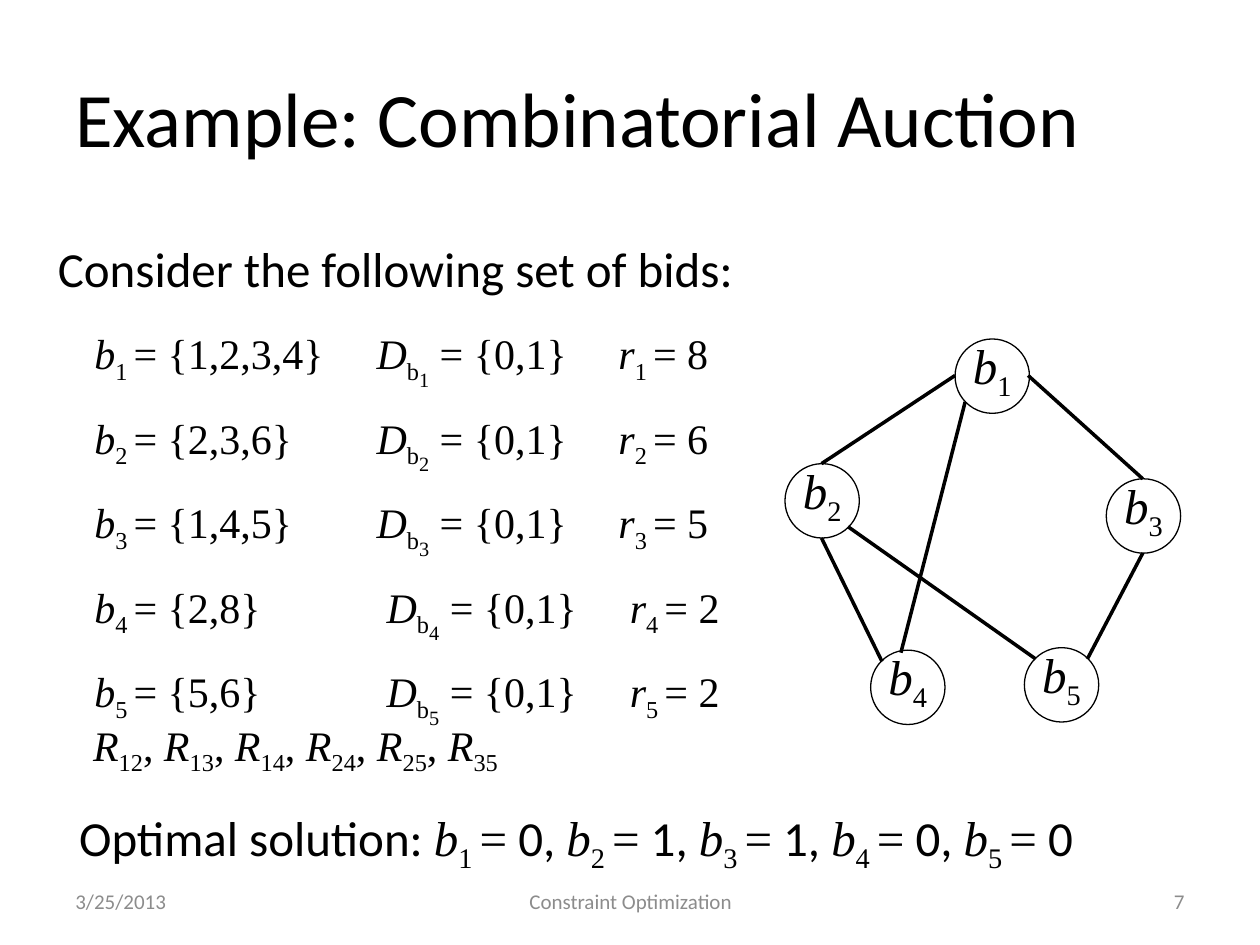
from lxml import etree
from pptx import Presentation
from pptx.dml.color import RGBColor
from pptx.enum.shapes import MSO_CONNECTOR, MSO_SHAPE
from pptx.enum.text import MSO_ANCHOR, PP_ALIGN
from pptx.oxml.ns import qn
from pptx.util import Emu, Pt

LEFT, CENTER, RIGHT = PP_ALIGN.LEFT, PP_ALIGN.CENTER, PP_ALIGN.RIGHT
TOP, MIDDLE, BOTTOM = MSO_ANCHOR.TOP, MSO_ANCHOR.MIDDLE, MSO_ANCHOR.BOTTOM
OVAL = MSO_SHAPE.OVAL
STRAIGHT = MSO_CONNECTOR.STRAIGHT

BLACK = RGBColor(0x00, 0x00, 0x00)
GRAY = RGBColor(0x8C, 0x8C, 0x8C)
SANS = "Calibri"
SERIF = "Times New Roman"
PX_PER_INCH = 100
NODE_SIZE = 59

BIDS = [
    ("{1,2,3,4}", 8, (224, 416)),
    ("{2,3,6}", 6, (224, 416)),
    ("{1,4,5}", 5, (224, 416)),
    ("{2,8}", 2, (232, 425)),
    ("{5,6}", 2, (232, 425)),
]
CONSTRAINTS = ["12", "13", "14", "24", "25", "35"]
SOLUTION = [0, 1, 1, 0, 0]
NODES = [(135, 0), (0, 99), (255, 111), (68, 247), (190, 245)]
EDGES = [
    (135, 29, 29, 99),
    (193, 29, 284, 111),
    (143, 50, 92, 249),
    (29, 158, 77, 256),
    (50, 149, 199, 254),
    (284, 170, 240, 254),
]


def px(length):
    return Emu(length * 914400 // PX_PER_INCH)


def add_run(paragraph, text, size, font=SERIF, color=BLACK, italic=False, baseline=0):
    run = paragraph.add_run()
    run.text = text
    run.font.name = font
    run.font.size = Pt(size)
    run.font.color.rgb = color
    run.font.italic = italic
    if baseline:
        run._r.get_or_add_rPr().set("baseline", str(baseline * 1000))


def add_variable(paragraph, letter, index, size):
    add_run(paragraph, letter, size, italic=True)
    add_run(paragraph, index, size, baseline=-25)


def set_tabs(paragraph, positions):
    tabs = etree.SubElement(paragraph._p.get_or_add_pPr(), qn("a:tabLst"))
    for position in positions:
        etree.SubElement(tabs, qn("a:tab"), pos=str(px(position)), algn="l")


def clear_margins(frame):
    frame.margin_left = frame.margin_right = 0
    frame.margin_top = frame.margin_bottom = 0


def add_text_frame(slide, box, anchor=TOP):
    frame = slide.shapes.add_textbox(*map(px, box)).text_frame
    frame.word_wrap = True
    frame.vertical_anchor = anchor
    return frame


def add_label(slide, box, text, size, color=BLACK, align=LEFT, anchor=MIDDLE):
    frame = add_text_frame(slide, box, anchor)
    paragraph = frame.paragraphs[0]
    paragraph.alignment = align
    add_run(paragraph, text, size, SANS, color)
    return frame


def add_footer(slide, box):
    left, top, width, height = box
    add_label(slide, (left, top, 233, height), "3/25/2013", 12, GRAY)
    add_label(slide, (left + 292, top, 317, height), "Constraint Optimization", 12, GRAY, CENTER)
    add_label(slide, (left + width - 233, top, 233, height), "7", 12, GRAY, RIGHT)


def add_graph(slide, box):
    left, top = box[:2]
    shapes = slide.shapes.add_group_shape().shapes
    for start_x, start_y, end_x, end_y in EDGES:
        edge = shapes.add_connector(
            STRAIGHT, px(left + start_x), px(top + start_y), px(left + end_x), px(top + end_y)
        )
        edge.line.color.rgb = BLACK
        edge.line.width = Pt(2)
        etree.SubElement(edge._element.spPr, qn("a:effectLst"))
    for index, (x, y) in enumerate(NODES, 1):
        node = shapes.add_shape(OVAL, px(left + x), px(top + y), px(NODE_SIZE), px(NODE_SIZE))
        node.shadow.inherit = False
        node.fill.background()
        node.line.color.rgb = BLACK
        node.line.width = Pt(0.75)
        frame = node.text_frame
        frame.word_wrap = False
        frame.vertical_anchor = BOTTOM
        clear_margins(frame)
        paragraph = frame.paragraphs[0]
        paragraph.alignment = CENTER
        add_variable(paragraph, "b", str(index), 28)


def add_bids(slide, box):
    frame = add_text_frame(slide, box)
    for index, (items, revenue, tabs) in enumerate(BIDS, 1):
        paragraph = frame.paragraphs[0] if index == 1 else frame.add_paragraph()
        paragraph.space_after = Pt(12)
        set_tabs(paragraph, tabs)
        add_variable(paragraph, "b", f"{index} ", 24)
        add_run(paragraph, f"= {items}\t", 24)
        add_variable(paragraph, "D", "b", 24)
        add_run(paragraph, str(index), 20, baseline=-50)
        add_run(paragraph, " = {0,1}\t", 24)
        add_variable(paragraph, "r", f"{index} ", 24)
        add_run(paragraph, f"= {revenue}", 24)


def add_constraints(slide, box):
    paragraph = add_text_frame(slide, box).paragraphs[0]
    for position, pair in enumerate(CONSTRAINTS):
        if position:
            add_run(paragraph, ", ", 24)
        add_variable(paragraph, "R", pair, 24)


def add_solution(slide, box):
    paragraph = add_text_frame(slide, box).paragraphs[0]
    paragraph.space_before = Pt(6)
    add_run(paragraph, "Optimal solution: ", 28, SANS)
    for index, value in enumerate(SOLUTION, 1):
        add_variable(paragraph, "b", f"{index} ", 28)
        add_run(paragraph, "=", 28)
        separator = ", " if index < len(SOLUTION) else ""
        add_run(paragraph, f" {value}{separator}", 28, SANS)


def main():
    presentation = Presentation()
    presentation.slide_width = px(1000)
    presentation.slide_height = px(750)
    slide = presentation.slides.add_slide(presentation.slide_layouts[6])
    add_label(slide, (50, 30, 900, 125), "Example: Combinatorial Auction", 44)
    introduction = add_label(
        slide, (46, 171, 900, 65), "Consider the following set of bids:", 28, anchor=BOTTOM
    )
    clear_margins(introduction)
    add_footer(slide, (50, 695, 900, 40))
    add_graph(slide, (623, 269, 314, 306))
    add_solution(slide, (53, 636, 900, 65))
    add_bids(slide, (65, 255, 538, 279))
    add_constraints(slide, (64, 566, 366, 50))
    presentation.save("out.pptx")


if __name__ == "__main__":
    main()
